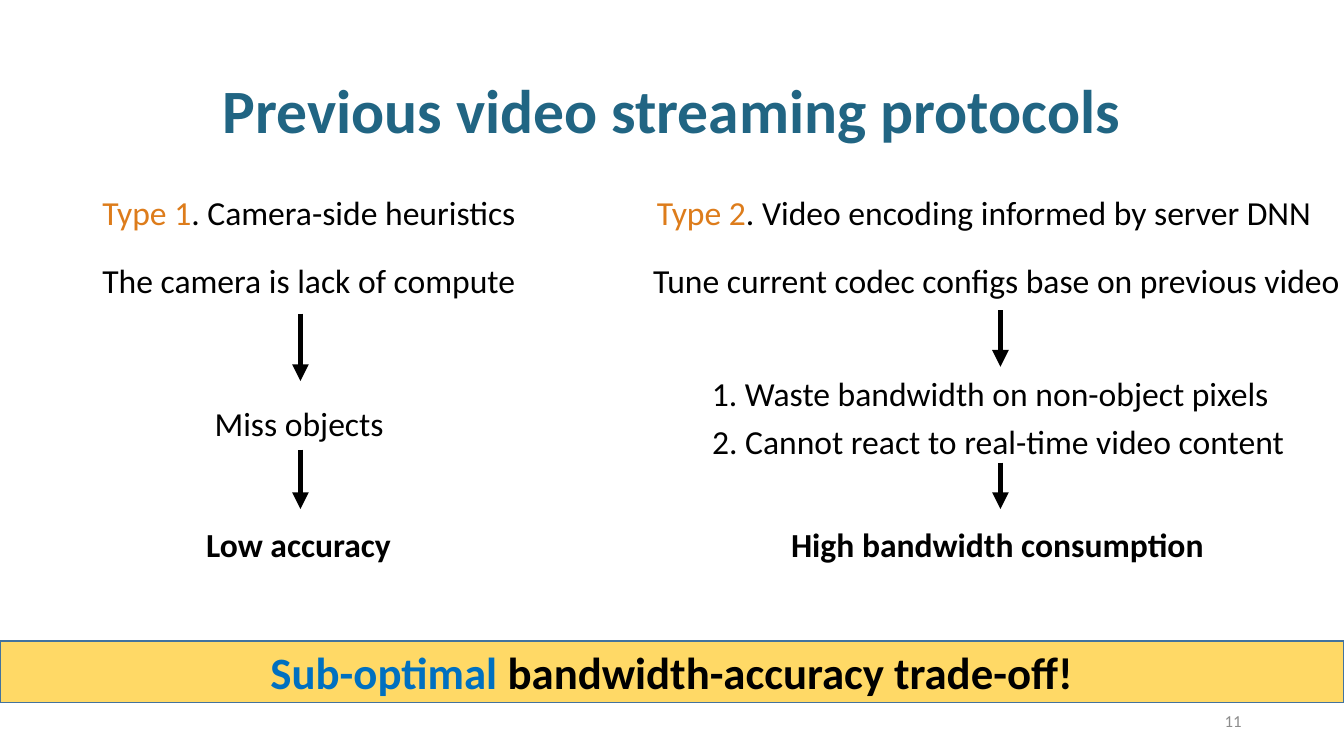
"""Build a slide that compares two types of video streaming protocols."""
from lxml.etree import SubElement
from pptx import Presentation
from pptx.dml.color import RGBColor
from pptx.enum.shapes import MSO_CONNECTOR, MSO_SHAPE
from pptx.enum.text import MSO_ANCHOR, MSO_AUTO_SIZE, PP_ALIGN
from pptx.oxml.ns import qn
from pptx.util import Pt

COLORS = {
    "title": "216583",
    "type": "DD7C1B",
    "text": "000000",
    "number": "8C8C8C",
    "highlight": "0070C0",
    "banner": "FFD966",
    "border": "43739E",
}
FONT = "Calibri"
LABEL_HEIGHT = 36.35
LEFT_ARROW_X, RIGHT_ARROW_X = 214.6, 714.6


def rgb(name):
    return RGBColor.from_string(COLORS[name])


def write_runs(paragraph, parts, size, bold=False):
    for text, color in parts:
        run = paragraph.add_run()
        run.text = text
        run.font.name = FONT
        run.font.size = Pt(size)
        run.font.bold = bold
        run.font.color.rgb = rgb(color)


def add_label(slide, left, top, width, parts, bold=False):
    box = slide.shapes.add_textbox(Pt(left), Pt(top), Pt(width), Pt(LABEL_HEIGHT))
    box.text_frame.word_wrap = False
    box.text_frame.auto_size = MSO_AUTO_SIZE.SHAPE_TO_FIT_TEXT
    write_runs(box.text_frame.paragraphs[0], parts, 24, bold)


def add_block(slide, left, top, width, height, text, color, size, align, bold=False):
    box = slide.shapes.add_textbox(Pt(left), Pt(top), Pt(width), Pt(height))
    box.text_frame.word_wrap = True
    box.text_frame.vertical_anchor = MSO_ANCHOR.MIDDLE
    paragraph = box.text_frame.paragraphs[0]
    paragraph.alignment = align
    write_runs(paragraph, [(text, color)], size, bold)
    return paragraph


def add_down_arrow(slide, x, top, bottom):
    arrow = slide.shapes.add_connector(
        MSO_CONNECTOR.STRAIGHT, Pt(x), Pt(top), Pt(x), Pt(bottom))
    arrow.line.width = Pt(4)
    arrow.line.color.rgb = rgb("text")
    SubElement(arrow.line._get_or_add_ln(), qn("a:tailEnd"), type="triangle")
    SubElement(arrow._element.spPr, qn("a:effectLst"))


def add_banner(slide, top, width, height, parts):
    banner = slide.shapes.add_shape(
        MSO_SHAPE.RECTANGLE, Pt(0), Pt(top), Pt(width), Pt(height))
    banner.shadow.inherit = False
    banner.fill.solid()
    banner.fill.fore_color.rgb = rgb("banner")
    banner.line.color.rgb = rgb("border")
    banner.line.width = Pt(1)
    banner.text_frame.vertical_anchor = MSO_ANCHOR.MIDDLE
    paragraph = banner.text_frame.paragraphs[0]
    paragraph.alignment = PP_ALIGN.CENTER
    write_runs(paragraph, parts, 32, bold=True)


def main():
    presentation = Presentation()
    presentation.slide_width, presentation.slide_height = Pt(960), Pt(540)
    slide = presentation.slides.add_slide(presentation.slide_layouts[6])

    title = add_block(slide, 66, 28.75, 828, 104.4, "Previous video streaming protocols",
                      "title", 44, PP_ALIGN.CENTER, bold=True)
    title.line_spacing = 0.9
    add_block(slide, 678, 500.5, 216, 28.75, "11", "number", 12, PP_ALIGN.RIGHT)

    for left, width, kind, description in (
        (66, 312.5, "Type 1", ". Camera-side heuristics"),
        (462.2, 494.6, "Type 2", ". Video encoding informed by server DNN"),
    ):
        add_label(slide, left, 133.2, width, [(kind, "type"), (description, "text")])

    for left, top, width, text in (
        (66, 182.2, 312.5, "The camera is lack of compute"),
        (459.4, 182.2, 509.8, "Tune current codec configs base on previous video"),
        (146.2, 284.4, 136, "Miss objects"),
        (501.4, 262.8, 416.2, "1. Waste bandwidth on non-object pixels"),
        (501.6, 297.4, 427, "2. Cannot react to real-time video content"),
    ):
        add_label(slide, left, top, width, [(text, "text")])

    for left, width, text in (
        (140.2, 148.3, "Low accuracy"),
        (558, 312.5, "High bandwidth consumption"),
    ):
        add_label(slide, left, 370.4, width, [(text, "text")], bold=True)

    for x, top, bottom in (
        (LEFT_ARROW_X, 224, 272.2),
        (LEFT_ARROW_X, 321.1, 363.6),
        (RIGHT_ARROW_X, 221.8, 262),
        (RIGHT_ARROW_X, 330.5, 363.6),
    ):
        add_down_arrow(slide, x, top, bottom)

    add_banner(slide, 457.9, 960, 44, [
        ("Sub-optimal", "highlight"), (" bandwidth-accuracy trade-off!", "text")])
    presentation.save("out.pptx")


if __name__ == "__main__":
    main()
